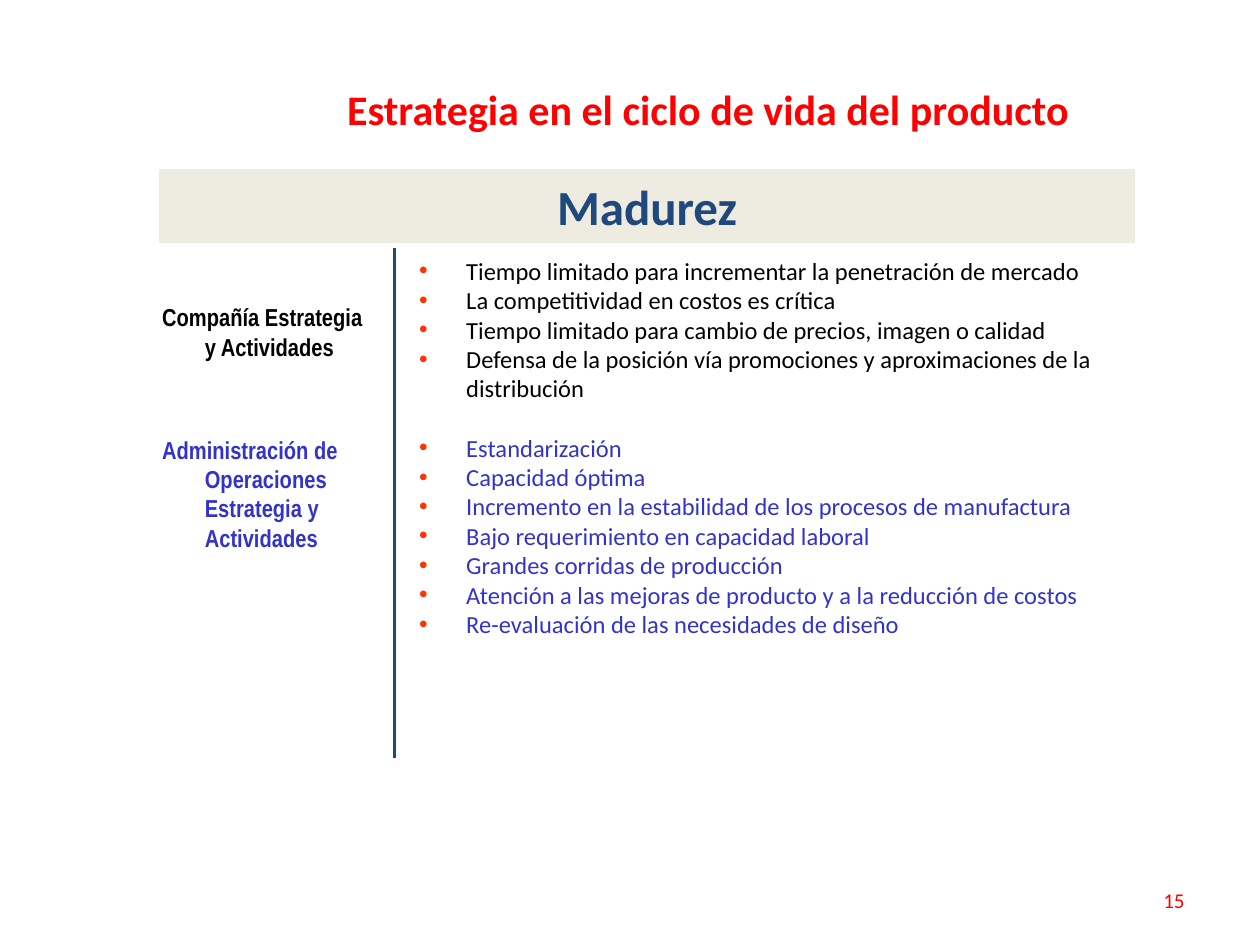
"""Builds the slide on product life cycle strategy in the maturity stage."""
from lxml import etree
from pptx import Presentation, util as u
from pptx.dml.color import RGBColor
from pptx.enum import shapes, text
from pptx.oxml import ns

RED = RGBColor(0xFF, 0x00, 0x00)
ORANGE = RGBColor(0xFF, 0x33, 0x00)
NAVY = RGBColor(0x1F, 0x49, 0x7D)
VIOLET = RGBColor(0x33, 0x33, 0xCC)
BLACK = RGBColor(0x00, 0x00, 0x00)
SAND = RGBColor(0xEE, 0xEC, 0xE1)

LEFT, CENTER, RIGHT = text.PP_ALIGN.LEFT, text.PP_ALIGN.CENTER, text.PP_ALIGN.RIGHT
TOP, MIDDLE = text.MSO_ANCHOR.TOP, text.MSO_ANCHOR.MIDDLE

COMPANY_ACTIONS = [
    "Tiempo limitado para incrementar la penetración de mercado",
    "La competitividad en costos es crítica",
    "Tiempo limitado para cambio de precios, imagen o calidad",
    "Defensa de la posición vía promociones y aproximaciones de la distribución",
]
OPERATIONS_ACTIONS = [
    "Estandarización",
    "Capacidad óptima",
    "Incremento en la estabilidad de los procesos de manufactura",
    "Bajo requerimiento en capacidad laboral",
    "Grandes corridas de producción",
    "Atención a las mejoras de producto y a la reducción de costos",
    "Re-evaluación de las necesidades de diseño",
]


class SlideBuilder:
    def __init__(self, slide, font="Calibri", body_size=14):
        self.slide = slide
        self.font = font
        self.body_size = body_size

    def fill_in(self, paragraph, words, color, size=None, bold=False, font=None, align=LEFT):
        paragraph.text = words
        paragraph.alignment = align
        paragraph.font.name = font or self.font
        paragraph.font.size = u.Pt(size or self.body_size)
        paragraph.font.bold = bold
        paragraph.font.color.rgb = color

    def frame(self, box, anchor=TOP):
        frame = self.slide.shapes.add_textbox(*map(u.Cm, box)).text_frame
        frame.word_wrap = True
        frame.vertical_anchor = anchor
        return frame

    def label(self, box, words, color, **style):
        self.fill_in(self.frame(box, MIDDLE).paragraphs[0], words, color, **style)

    def banner(self, box, words, fill, color, size):
        banner = self.slide.shapes.add_shape(shapes.MSO_SHAPE.RECTANGLE, *map(u.Cm, box))
        banner.shadow.inherit = False
        banner.fill.solid()
        banner.fill.fore_color.rgb = fill
        banner.line.color.rgb = fill
        banner.line.width = u.Pt(1)
        banner.text_frame.vertical_anchor = MIDDLE
        self.fill_in(banner.text_frame.paragraphs[0], words, color, size, True, align=CENTER)

    def divider(self, x, top, bottom, color):
        divider = self.slide.shapes.add_connector(
            shapes.MSO_CONNECTOR.STRAIGHT, u.Cm(x), u.Cm(top), u.Cm(x), u.Cm(bottom))
        divider.line.color.rgb = color
        divider.line.width = u.Pt(2)
        etree.SubElement(divider._element.spPr, ns.qn("a:effectLst"))

    def hanging_groups(self, box, groups, indent, gap, bullet_color=None, **style):
        frame = self.frame(box)
        paragraph = None
        for color, items in groups:
            for position, words in enumerate(items):
                starts_group = paragraph is not None and position == 0
                paragraph = frame.add_paragraph() if paragraph is not None else frame.paragraphs[0]
                properties = paragraph._p.get_or_add_pPr()
                properties.set("marL", str(u.Cm(indent)))
                properties.set("indent", str(-u.Cm(indent)))
                if bullet_color is not None:
                    tint = etree.SubElement(properties, ns.qn("a:buClr"))
                    etree.SubElement(tint, ns.qn("a:srgbClr"), val=str(bullet_color))
                    etree.SubElement(properties, ns.qn("a:buFont"), typeface="Arial")
                    etree.SubElement(properties, ns.qn("a:buChar"), char="•")
                if starts_group:
                    paragraph.space_before = u.Pt(gap)
                self.fill_in(paragraph, words, color, **style)


def main():
    deck = Presentation()
    deck.slide_width, deck.slide_height = u.Cm(25.4), u.Cm(19.05)
    builder = SlideBuilder(deck.slides.add_slide(deck.slide_layouts[6]))

    builder.label((18.2, 17.65, 5.93, 1.01), "15", RED, size=12, align=RIGHT)
    builder.label((4.75, 1.65, 19.05, 1.07), "Estrategia en el ciclo de vida del producto",
                  RED, size=24, bold=True, align=CENTER)
    builder.hanging_groups((8.2, 5.03, 14.86, 11.25),
                           [(BLACK, COMPANY_ACTIONS), (VIOLET, OPERATIONS_ACTIONS)],
                           indent=0.95, gap=17, bullet_color=ORANGE)
    builder.banner((3.23, 3.43, 19.63, 1.45), "Madurez", SAND, NAVY, 28)
    builder.divider(7.95, 5, 15.29, NAVY)
    builder.hanging_groups((3.02, 5.97, 4.57, 8.84),
                           [(BLACK, ["Compañía Estrategia y Actividades"]),
                            (VIOLET, ["Administración de Operaciones Estrategia y Actividades"])],
                           indent=0.86, gap=42, font="Arial Narrow", bold=True)
    deck.save("out.pptx")


if __name__ == "__main__":
    main()
